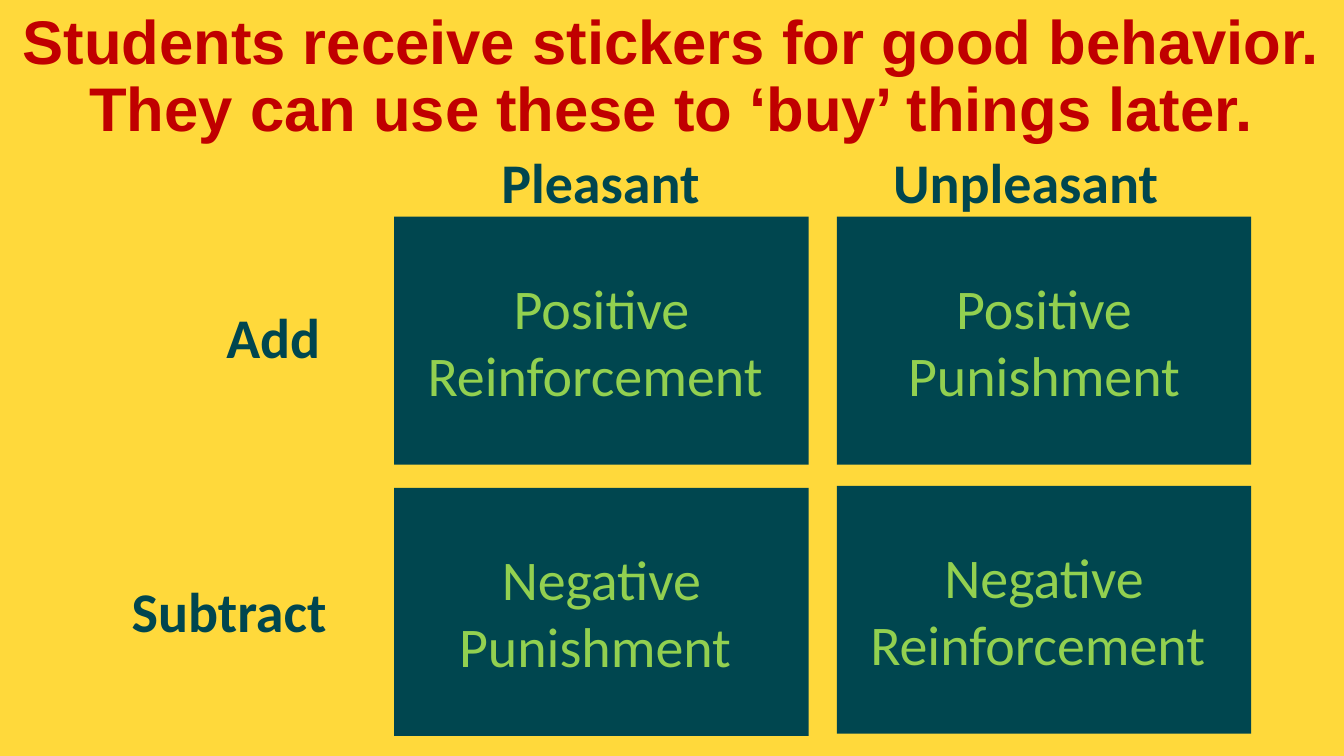
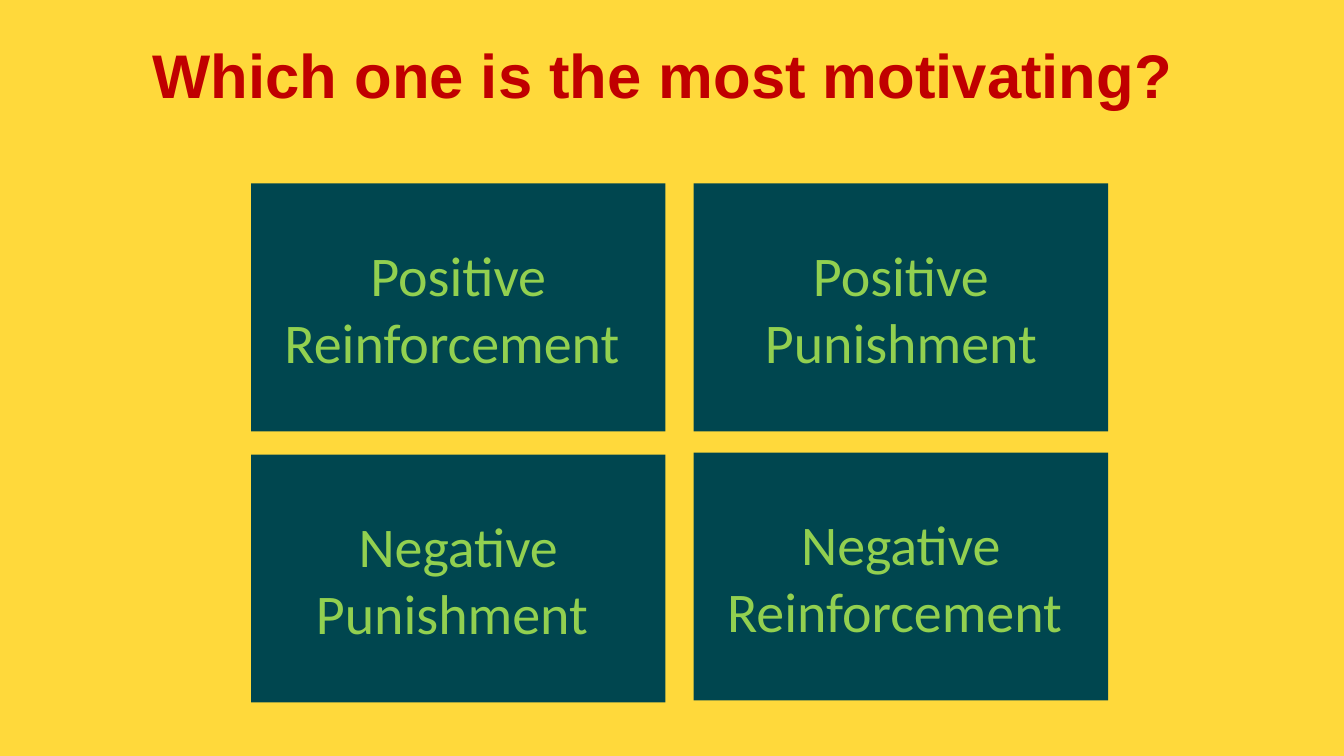
from pptx import Presentation, util as u
from pptx.dml.color import RGBColor
from pptx.enum import shapes, text

# Shared style
GOLD, TEAL, LIME, RED = "FFD93B", "00464F", "92D050", "C00000"
WIDE, HIGH = 13.33, 7.5
CELL_W, CELL_H = 4.11, 2.46
COL_STEP, ROW_STEP = 4.39, 2.69
LIFT = 0.02  # the right column's lower cell sits slightly higher

GRID = [
    ["Positive Reinforcement ", "Positive Punishment"],
    ["Negative Punishment ", "Negative Reinforcement "],
]


def paint(tone):
    return RGBColor.from_string(tone)


def write(shape, words, size=40, font="Calibri", tone=TEAL, bold=False,
          wrap=True, gap=None):
    """Put one centred paragraph into a shape."""
    frame = shape.text_frame
    frame.word_wrap = wrap
    frame.vertical_anchor = text.MSO_ANCHOR.MIDDLE
    para = frame.paragraphs[0]
    para.alignment = text.PP_ALIGN.CENTER
    if gap:
        para.line_spacing = gap
    run = para.add_run()
    run.text = words
    run.font.size, run.font.name, run.font.bold = u.Pt(size), font, bold
    run.font.color.rgb = paint(tone)


class Deck:
    def __init__(self):
        self.show = Presentation()
        self.show.slide_width = u.Inches(WIDE)
        self.show.slide_height = u.Inches(HIGH)
        self.slide = None

    def page(self, title):
        self.slide = self.show.slides.add_slide(self.show.slide_layouts[6])
        fill = self.slide.background.fill
        fill.solid()
        fill.fore_color.rgb = paint(GOLD)
        write(self.box(0, 0.05, WIDE, 1.45), title, size=44, font="Arial",
              tone=RED, bold=True, gap=0.9)

    def box(self, *place):
        return self.slide.shapes.add_textbox(*map(u.Inches, place))

    def label(self, words, left, top, width):
        write(self.box(left, top, width, 0.77), words, bold=True, wrap=False)

    def cell(self, words, left, top):
        place = map(u.Inches, (left, top, CELL_W, CELL_H))
        card = self.slide.shapes.add_shape(
            shapes.MSO_SHAPE.RECTANGLE, *place)
        card.shadow.inherit = False
        card.fill.solid()
        card.fill.fore_color.rgb = paint(TEAL)
        card.line.fill.background()
        write(card, words, tone=LIME)

    def grid(self, left, top):
        for row, names in enumerate(GRID):
            for col, name in enumerate(names):
                self.cell(name, left + col * COL_STEP,
                          top + row * (ROW_STEP - col * LIFT))


def main():
    deck = Deck()

    # Example with the labelled grid
    deck.page("Students receive stickers for good behavior. "
              "They can use these to ‘buy’ things later.")
    for words, left, width in (("Pleasant", 4.85, 2.21),
                               ("Unpleasant ", 8.72, 3.03)):
        deck.label(words, left, 1.41, width)
    for words, left, top, width in (("Add", 2.14, 2.95, 1.14),
                                    ("Subtract ", 1.18, 5.67, 2.31)):
        deck.label(words, left, top, width)
    deck.grid(3.91, 2.15)

    # Question with the plain grid
    deck.page("Which one is the most motivating? ")
    deck.grid(2.49, 1.82)

    deck.show.save("out.pptx")


if __name__ == "__main__":
    main()
